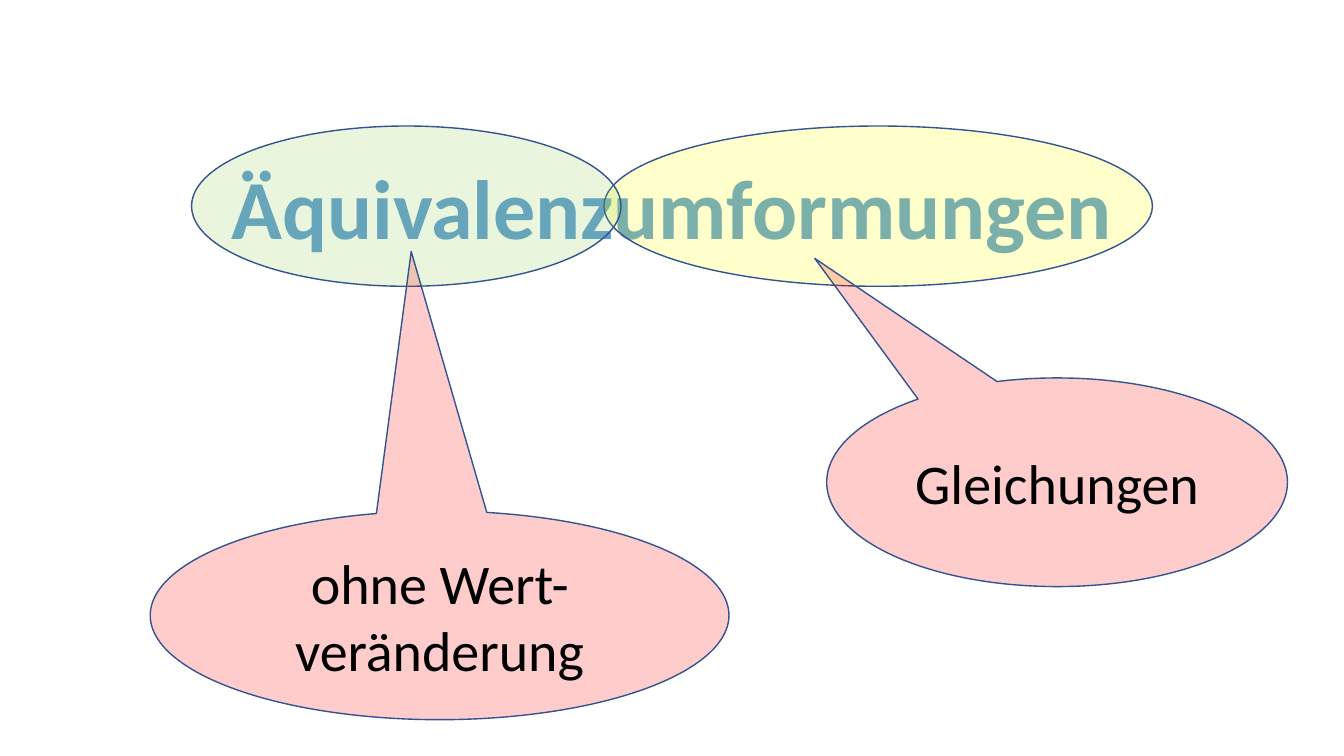
from copy import deepcopy
from pptx import Presentation
from pptx.dml.color import RGBColor
from pptx.enum.shapes import MSO_SHAPE as Shape
from pptx.enum.text import MSO_ANCHOR as Anchor, MSO_AUTO_SIZE as Auto, PP_ALIGN as Align
from pptx.oxml.ns import qn
from pptx.util import Inches, Pt


def color(code):
    return RGBColor.from_string(code)


def write(shape, text, size=40, bold=False, wrap=True, fit=Auto.NONE, tint="000000"):
    frame = shape.text_frame
    frame.word_wrap = wrap
    frame.auto_size = fit
    frame.vertical_anchor = Anchor.MIDDLE
    para = frame.paragraphs[0]
    para.alignment = Align.CENTER
    run = para.add_run()
    run.text = text
    font = run.font
    font.name = "Calibri"
    font.size = Pt(size)
    font.bold = bold
    font.fill.solid()
    font.fill.fore_color.rgb = color(tint)
    return run


deck = Presentation()
deck.slide_width = Inches(13.33)
deck.slide_height = Inches(7.5)
slide = deck.slides.add_slide(deck.slide_layouts[5])

title = slide.shapes.title
title.left, title.top = Inches(2.15), Inches(1.49)
title.width, title.height = Inches(9.03), Inches(1.11)
word = write(title, "Äquivalenzumformungen", size=60, bold=True, wrap=False,
             fit=Auto.SHAPE_TO_FIT_TEXT)
fill = word.font.fill
fill.gradient()
fill.gradient_angle = 270
first = next(word._r.iter(qn("a:gs")))
first.addnext(deepcopy(first))
shades = [(0, "1F4E79"), (0.5, "5B9BD5"), (1, "9DC3E6")]
for stop, (place, shade) in zip(fill.gradient_stops, shades):
    stop.position = place
    stop.color.rgb = color(shade)

oval, call = Shape.OVAL, Shape.OVAL_CALLOUT
bubbles = [
    (oval, (5.99, 1.25, 5.44, 1.59), "FFFF00", None, None),
    (oval, (1.9, 1.25, 4.26, 1.59), "92D050", None, None),
    (call, (8.2, 3.75, 4.57, 2.07), "FF0000", (-0.526, -1.073), "Gleichungen"),
    (call, (1.49, 5.07, 5.74, 2.07), "FF0000", (-0.049, -1.744), "ohne Wert-veränderung"),
]
for kind, box, tint, tip, text in bubbles:
    bubble = slide.shapes.add_shape(kind, *map(Inches, box))
    bubble.shadow.inherit = False
    bubble.fill.solid()
    bubble.fill.fore_color.rgb = color(tint)
    tone = next(bubble._element.spPr.iter(qn("a:srgbClr")))
    tone.makeelement(qn("a:alpha"))
    alpha = tone.makeelement(qn("a:alpha"), {"val": "20000"})
    tone.append(alpha)
    bubble.line.color.rgb = color("325491")
    bubble.line.width = Pt(1)
    if text:
        bubble.adjustments[0], bubble.adjustments[1] = tip
        write(bubble, text)

deck.save("out.pptx")
